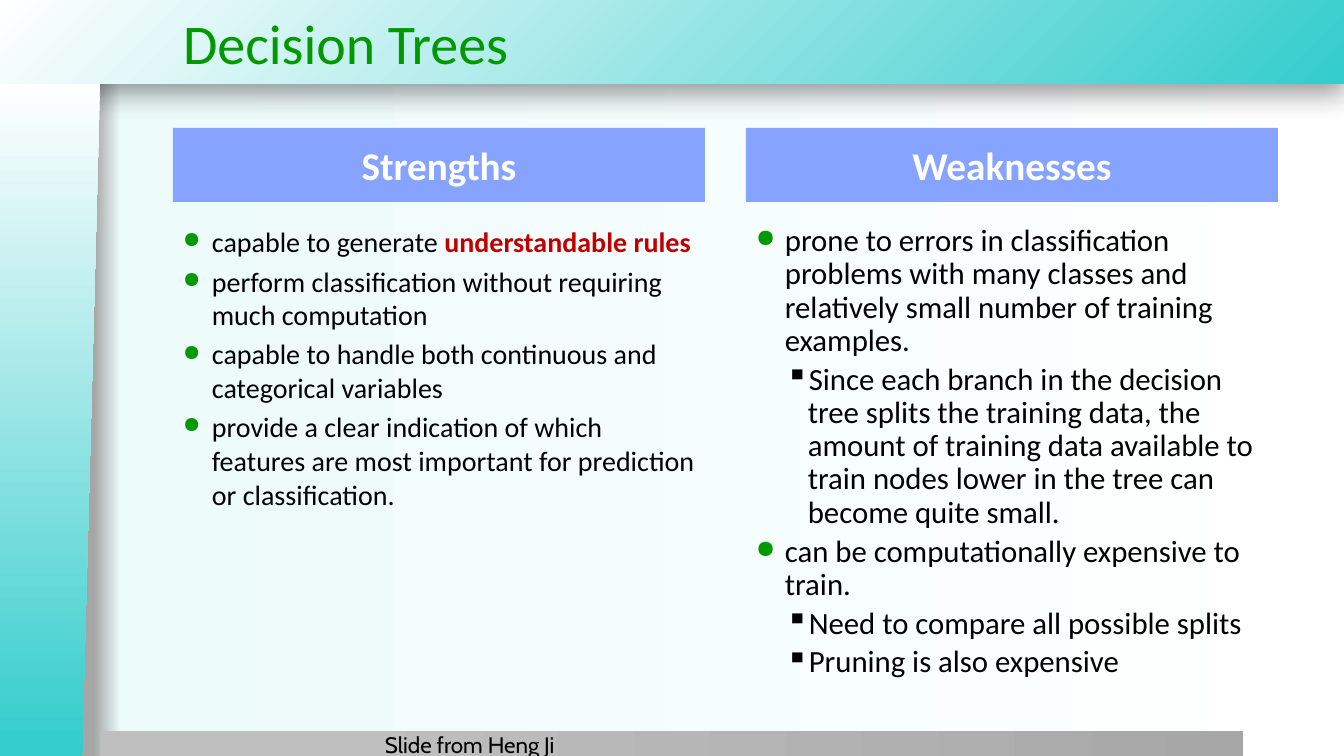
from dataclasses import dataclass

from pptx import Presentation
from pptx.dml.color import RGBColor
from pptx.enum.shapes import MSO_SHAPE
from pptx.enum.text import MSO_ANCHOR, MSO_AUTO_SIZE, PP_ALIGN
from pptx.oxml import parse_xml
from pptx.oxml.ns import nsdecls, qn
from pptx.util import Pt

RECT = MSO_SHAPE.RECTANGLE
MIDDLE = MSO_ANCHOR.MIDDLE
FIXED = MSO_AUTO_SIZE.NONE
LEFT, CENTER = PP_ALIGN.LEFT, PP_ALIGN.CENTER
SCALE = 914400 / 100.8
DOWN = '<a:lin ang="5400000" scaled="0"/>'
ACROSS = '<a:lin ang="0" scaled="0"/>'
CORNER = '<a:path path="circle"><a:fillToRect l="100000" t="100000"/></a:path>'


@dataclass(frozen=True)
class Theme:
    """Colours, fonts and type sizes of the slide."""
    teal: str = "34CCCC"
    white: str = "FFFFFF"
    mist: str = "EDFBFB"
    edge: str = "A6A6A6"
    silver: str = "BFBFBF"
    grey: str = "A7A7A7"
    green: str = "009900"
    blue: str = "85A3FF"
    red: str = "C00000"
    black: str = "000000"
    font: str = "Calibri"
    small: str = "Cabin"
    title: int = 40
    head: int = 28
    left: int = 20
    right: int = 22
    note: int = 16
    gap: int = 4


def px(n):
    """Turn px into EMU."""
    return round(n * SCALE)


def node(tag, body):
    """Build one drawing element."""
    return parse_xml(f"<a:{tag} {nsdecls('a')}>{body}</a:{tag}>")


class Deck:
    """Holds the theme and the current slide."""

    def __init__(self, theme):
        """Open a slide with a title."""
        self.theme = theme
        self.prs = Presentation()
        self.prs.slide_width, self.prs.slide_height = px(1344), px(756)
        self.slide = self.prs.slides.add_slide(self.prs.slide_layouts[5])
        self.shapes = self.slide.shapes

    def style(self, para, size, color, bold=False, font=None):
        """Format every run of a paragraph."""
        for run in para.runs:
            face = run.font
            face.name, face.size, face.bold = font or self.theme.font, Pt(size), bold
            face.color.rgb = RGBColor.from_string(color)

    def blend(self, fill, root, stops, way):
        """Give a fill its colour stops and direction."""
        fill.gradient()
        old = next(root.iter(qn("a:gradFill")))
        marks = "".join(
            f'<a:gs pos="{at * 1000}"><a:srgbClr val="{color}"/></a:gs>'
            for at, color in stops)
        new = node("gradFill", f"<a:gsLst>{marks}</a:gsLst>{way}")
        old.getparent().replace(old, new)

    def back(self, stops):
        """Colour the background."""
        self.blend(self.slide.background.fill, self.slide.element, stops, ACROSS)

    def plain(self, shape):
        """Remove outline and shadow."""
        shape.line.fill.background()
        shape.shadow.inherit = False
        return shape

    def band(self, box, stops, way):
        """Add a blended rectangle."""
        shape = self.plain(self.shapes.add_shape(RECT, *map(px, box)))
        self.blend(shape.fill, shape.element, stops, way)
        return shape

    def shade(self, shape):
        """Drop a soft shadow below a shape."""
        effect = next(shape.element.iter(qn("a:effectLst")))
        shadow = node("outerShdw", '<a:srgbClr val="%s"><a:alpha val="40000"/></a:srgbClr>'
                      % self.theme.black)
        for key, val in (("blurRad", Pt(20)), ("dist", Pt(6)), ("dir", 5400000),
                         ("algn", "t"), ("rotWithShape", 0)):
            shadow.set(key, str(val))
        effect.append(shadow)

    def panel(self, points, stops):
        """Add a blended outline shape."""
        pen = self.shapes.build_freeform(*map(px, points[0]), scale=1.0)
        pen.add_line_segments([tuple(map(px, point)) for point in points[1:]])
        shape = self.plain(pen.convert_to_shape())
        self.blend(shape.fill, shape.element, stops, DOWN)

    def title(self, text, box):
        """Place the title above the bands."""
        shape = self.shapes.title
        self.shapes.element.append(shape.element)
        shape.left, shape.top, shape.width, shape.height = map(px, box)
        frame = shape.text_frame
        frame.text = text
        frame.auto_size, frame.vertical_anchor = FIXED, MIDDLE
        frame.paragraphs[0].alignment = LEFT
        self.style(frame.paragraphs[0], self.theme.title, self.theme.green)

    def head(self, text, box):
        """Add a column heading."""
        shape = self.plain(self.shapes.add_shape(RECT, *map(px, box)))
        shape.fill.solid()
        shape.fill.fore_color.rgb = RGBColor.from_string(self.theme.blue)
        frame = shape.text_frame
        frame.text = text
        frame.vertical_anchor = MIDDLE
        frame.paragraphs[0].alignment = CENTER
        self.style(frame.paragraphs[0], self.theme.head, self.theme.white, True)

    def bullet(self, para, level):
        """Set indent and bullet for a level."""
        props = para._p.get_or_add_pPr()
        margin, hang = ((29, 29), (52, 22))[level]
        props.set("marL", str(px(margin)))
        props.set("indent", str(px(-hang)))
        if level == 0:
            props.append(node("buClr", f'<a:srgbClr val="{self.theme.green}"/>'))
            size = node("buSzPct", "")
            size.set("val", "80000")
            props.append(size)
        mark = node("buChar", "")
        mark.set("char", "●▪"[level])
        props.append(mark)

    def points(self, items, box, size, pitch):
        """Add a bulleted list; a bar starts the stressed part."""
        frame = self.shapes.add_textbox(*map(px, box)).text_frame
        frame.word_wrap = True
        for i, (level, text) in enumerate(items):
            para = frame.add_paragraph() if i else frame.paragraphs[0]
            lead, _, stress = text.partition("|")
            para.text = lead
            para.level = level
            self.bullet(para, level)
            para.line_spacing = pitch
            para.space_before = Pt(self.theme.gap if i else 0)
            self.style(para, size, self.theme.black)
            if stress:
                run = para.add_run()
                run.text = stress
                face = run.font
                face.name, face.size, face.bold = self.theme.font, Pt(size), True
                face.color.rgb = RGBColor.from_string(self.theme.red)

    def note(self, text, box):
        """Add the credit line."""
        frame = self.shapes.add_textbox(*map(px, box)).text_frame
        frame.text = text
        frame.word_wrap = True
        frame.margin_left = frame.margin_right = 0
        frame.margin_top = frame.margin_bottom = 0
        self.style(frame.paragraphs[0], self.theme.note, self.theme.black,
                   font=self.theme.small)


def main():
    """Build and save the slide."""
    look = Theme()
    deck = Deck(look)
    deck.back([(7, look.edge), (9, look.mist), (100, look.white)])
    deck.shade(deck.band((0, 0, 1344, 84), [(0, look.teal), (100, look.white)], CORNER))
    deck.band((101, 731, 1142, 25), [(20, look.silver), (100, look.grey)], ACROSS)
    deck.panel([(0, 84), (100, 84), (82, 756), (0, 756)],
               [(0, look.white), (99, look.teal)])
    deck.title("Decision Trees", (173, 0, 1171, 84))
    pros = [
        (0, "capable to generate |understandable rules"),
        (0, "perform classification without requiring much computation"),
        (0, "capable to handle both continuous and categorical variables"),
        (0, "provide a clear indication of which features are most important "
            "for prediction or classification."),
    ]
    cons = [
        (0, "prone to errors in classification problems with many classes and "
            "relatively small number of training examples."),
        (1, "Since each branch in the decision tree splits the training data, the "
            "amount of training data available to train nodes lower in the tree "
            "can become quite small."),
        (0, "can be computationally expensive to train."),
        (1, "Need to compare all possible splits"),
        (1, "Pruning is also expensive"),
    ]
    for x, name, items, size, pitch in ((173, "Strengths", pros, look.left, 1.0),
                                        (746, "Weaknesses", cons, look.right, 0.9)):
        deck.head(name, (x, 128, 532, 74))
        deck.points(items, (x, 220, 532, 482), size, pitch)
    deck.note("Slide from Heng Ji", (385, 731, 180, 22))
    deck.prs.save("out.pptx")


if __name__ == "__main__":
    main()
